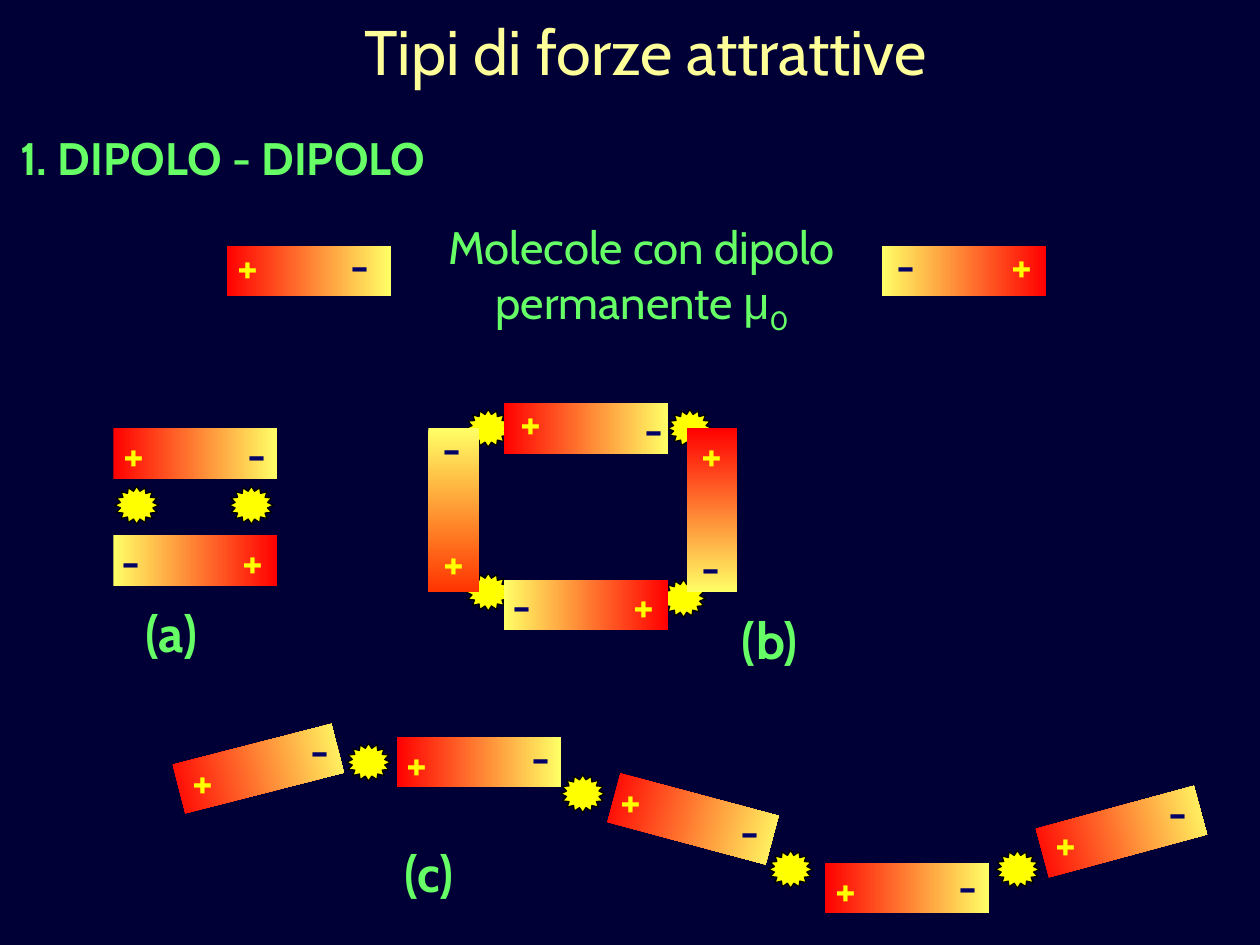
import pptx
import pptx.dml.color
import pptx.enum.shapes
import pptx.enum.text
import pptx.util

RGB = pptx.dml.color.RGBColor
NAVY = RGB(0x00, 0x00, 0x36)
CREAM = RGB(0xFF, 0xFF, 0x99)
GREEN = RGB(0x66, 0xFF, 0x66)
RED = RGB(0xFF, 0x00, 0x00)
ORANGE = RGB(0xFF, 0x33, 0x00)
PALE = RGB(0xFF, 0xFF, 0x66)
YELLOW = RGB(0xFF, 0xFF, 0x00)
BLUE = RGB(0x00, 0x00, 0x66)
BLACK = RGB(0x00, 0x00, 0x00)

SHAPE = pptx.enum.shapes.MSO_SHAPE
ALIGN = pptx.enum.text.PP_ALIGN
ANCHOR = pptx.enum.text.MSO_ANCHOR
FIT = pptx.enum.text.MSO_AUTO_SIZE
SCALE = 9144
BAR = (130, 40)
STAR = (35, 30)

BACK = [(525, 460), (370, 455), (530, 325), (370, 325)]
FRONT = [(182, 386), (91, 386), (275, 590), (445, 615), (610, 675), (790, 675)]

RIGHT = [
    ((180, 195), 0, (176, 186), (272, 185)),
    ((90, 340), 0, (85, 335), (190, 335)),
    ((400, 320), 0, (400, 310), (505, 315)),
    ((140, 590), 345.6, (140, 595), (240, 570)),
    ((315, 585), 0, (310, 580), (415, 576)),
    ((485, 630), 15, (480, 610), (581, 634)),
    ((655, 685), 0, (650, 680), (754, 678)),
    ((825, 640), 344.8, (825, 644), (921, 619)),
]
LEFT = [
    ((700, 195), 0, (790, 185), (705, 185)),
    ((90, 425), 0, (180, 420), (90, 420)),
    ((400, 460), 0, (490, 455), (400, 455)),
]
TAGS = [("(a)", 100, 475, 72), ("(b)", 574, 480, 74), ("(c)", 306, 665, 69)]


class Deck:
    """Draws text, stars and dipoles on the current slide in one style."""

    def __init__(self):
        self.pres = pptx.Presentation()
        self.pres.slide_width = 1000 * SCALE
        self.pres.slide_height = 750 * SCALE
        self.slide = self.pres.slides.add_slide(self.pres.slide_layouts[6])
        fill = self.slide.background.fill
        fill.solid()
        fill.fore_color.rgb = NAVY
        self.face = "Cabin"

    def shape(self, kind, spot, size):
        item = self.slide.shapes.add_shape(kind, *(n * SCALE for n in (*spot, *size)))
        item.shadow.inherit = False
        return item

    def star(self, spot):
        item = self.shape(SHAPE.STAR_16_POINT, spot, STAR)
        item.adjustments[0] = 0.375
        item.fill.solid()
        item.fill.fore_color.rgb = YELLOW
        item.line.color.rgb = BLACK
        item.line.width = pptx.util.Pt(0.75)

    def bar(self, spot, turn, tints, down=False):
        item = self.shape(SHAPE.RECTANGLE, spot, BAR)
        item.rotation = turn
        item.line.fill.background()
        item.fill.gradient()
        item.fill.gradient_angle = 270 if down else 0
        for stop, tint in zip(item.fill.gradient_stops, tints):
            stop.color.rgb = tint
        if down:
            grad = item._element.spPr.find(pptx.oxml.ns.qn("a:gradFill"))
            grad.set("rotWithShape", "0")

    def text(self, lines, box, size, tint, bold=False, align=ALIGN.CENTER, grow=True):
        frame = self.slide.shapes.add_textbox(*(n * SCALE for n in box)).text_frame
        frame.word_wrap = False
        if grow:
            frame.auto_size = FIT.SHAPE_TO_FIT_TEXT
            frame.margin_left = frame.margin_right = 6 * SCALE
            frame.margin_top = frame.margin_bottom = 3 * SCALE
        else:
            frame.vertical_anchor = ANCHOR.MIDDLE
        for i, line in enumerate(lines):
            para = frame.add_paragraph() if i else frame.paragraphs[0]
            para.alignment = align
            para.add_run().text = line
            para.font.size = pptx.util.Pt(size)
            para.font.name = self.face
            para.font.bold = bold
            para.font.color.rgb = tint
        return frame

    def signs(self, plus, minus):
        self.text(["+"], (*plus, 42, 50), 26, YELLOW, True)
        self.text(["-"], (*minus, 28, 50), 26, BLUE, True)

    def dipole(self, spot, turn, plus, minus, tints, down=False):
        self.bar(spot, turn, tints, down)
        self.signs(plus, minus)

    def moment(self, para):
        para.font.name = None
        mu, sub = para.add_run(), para.add_run()
        mu.text, sub.text = "μ", "0"
        for run, face in zip(para.runs, (self.face, "Arial", self.face)):
            run.font.name = face
        sub.font._element.set("baseline", "-25000")


def main():
    deck = Deck()
    for spot in BACK:
        deck.star(spot)
    deck.text(["Tipi di forze attrattive"], (70, 0, 885, 80), 36, CREAM, grow=False)
    deck.text(["1. DIPOLO - DIPOLO"], (10, 100, 389, 50), 26, GREEN, True, ALIGN.LEFT)
    lines = ["Molecole con dipolo", "permanente "]
    frame = deck.text(lines, (345, 171, 329, 94), 26, GREEN)
    deck.moment(frame.paragraphs[1])
    for row in RIGHT:
        deck.dipole(*row, (RED, PALE))
    for row in LEFT:
        deck.dipole(*row, (PALE, RED))
    deck.dipole((295, 385), 270, (339, 421), (345, 330), (PALE, ORANGE), True)
    deck.dipole((500, 385), 90, (544, 335), (550, 425), (RED, PALE), True)
    for tag, left, top, width in TAGS:
        deck.text([tag], (left, top, width, 54), 29, GREEN, True)
    for spot in FRONT:
        deck.star(spot)
    deck.pres.save("out.pptx")


if __name__ == "__main__":
    main()
